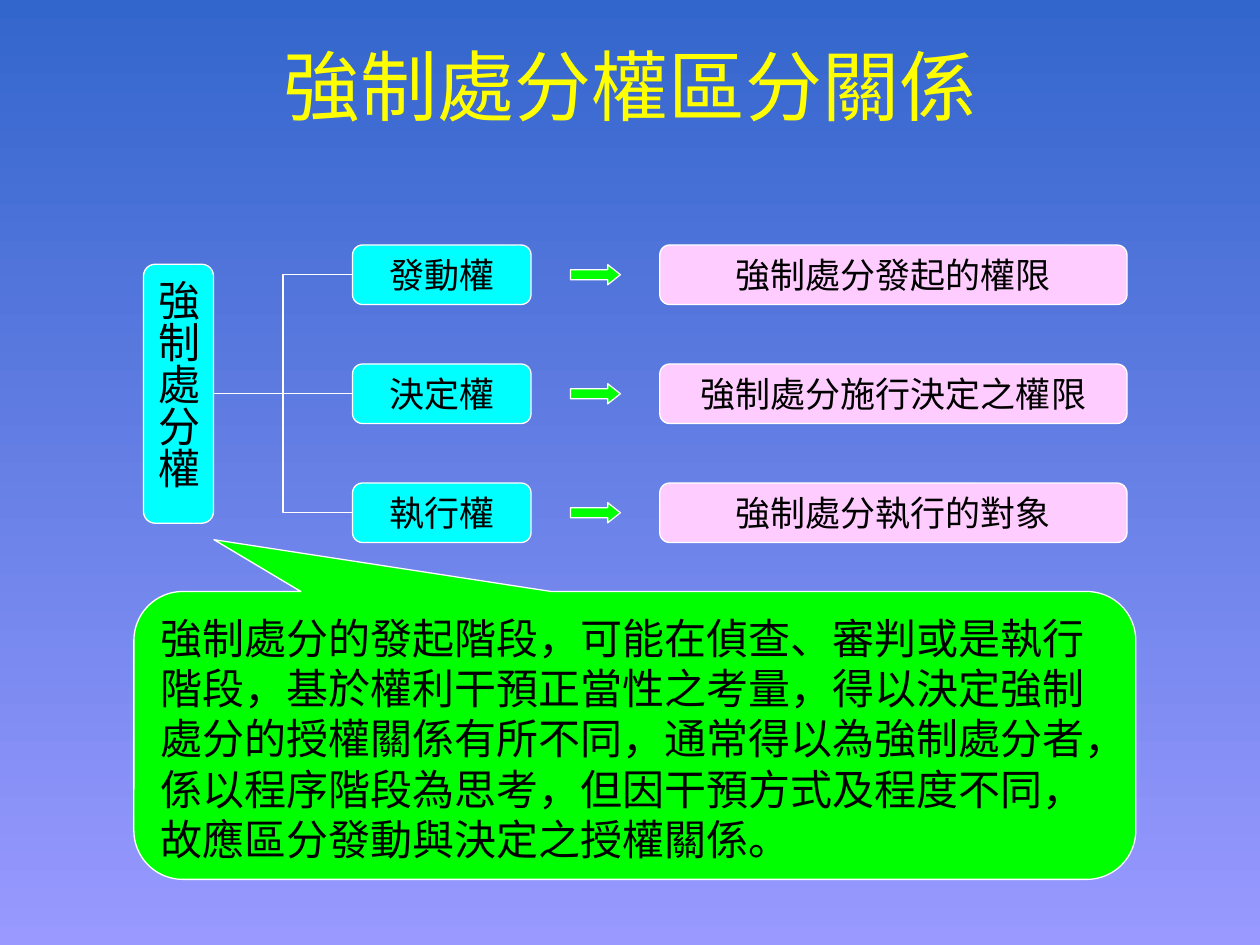
from lxml import etree
from pptx import Presentation
from pptx.dml.color import RGBColor
from pptx.enum.shapes import MSO_CONNECTOR, MSO_SHAPE
from pptx.enum.text import MSO_ANCHOR, PP_ALIGN
from pptx.oxml.ns import qn
from pptx.util import Pt

TITLE = "強制處分權區分關係"
ROOT = "強制處分權"
POWERS = [
    ("發動權", "強制處分發起的權限"),
    ("決定權", "強制處分施行決定之權限"),
    ("執行權", "強制處分執行的對象"),
]
EXPLANATION = (
    "強制處分的發起階段，可能在偵查、審判或是執行階段，"
    "基於權利干預正當性之考量，得以決定強制處分的授權關係有所不同，"
    "通常得以為強制處分者，係以程序階段為思考，"
    "但因干預方式及程度不同，故應區分發動與決定之授權關係。"
)

BLUE = RGBColor(0x33, 0x66, 0xCC)
LAVENDER = RGBColor(0x99, 0x99, 0xFF)
YELLOW = RGBColor(0xFF, 0xFF, 0x00)
CYAN = RGBColor(0x00, 0xFF, 0xFF)
PINK = RGBColor(0xFF, 0xCC, 0xFF)
GREEN = RGBColor(0x00, 0xFF, 0x00)
WHITE = RGBColor(0xFF, 0xFF, 0xFF)
BLACK = RGBColor(0x00, 0x00, 0x00)

MIDDLE = 225  # centre line of the tree
ROW_PITCH = 68
ROW_HEIGHT = 34
ROOT_HEIGHT = 148
ARROW_HEIGHT = 11.5


def add_text(shape, text, size, color=BLACK, font_name="Roboto",
             align=PP_ALIGN.CENTER, anchor=MSO_ANCHOR.MIDDLE, wrap=False):
    frame = shape.text_frame
    frame.word_wrap = wrap
    frame.vertical_anchor = anchor
    paragraph = frame.paragraphs[0]
    paragraph.alignment = align
    run = paragraph.add_run()
    run.text = text
    run.font.name = font_name
    run.font.size = Pt(size)
    run.font.color.rgb = color


def add_outlined_shape(slide, kind, left, top, width, height, fill):
    shape = slide.shapes.add_shape(kind, Pt(left), Pt(top), Pt(width), Pt(height))
    shape.shadow.inherit = False
    shape.fill.solid()
    shape.fill.fore_color.rgb = fill
    shape.line.color.rgb = WHITE
    shape.line.width = Pt(0.75)
    return shape


def add_box(slide, text, left, top, width, height, fill, size=20):
    box = add_outlined_shape(slide, MSO_SHAPE.FLOWCHART_ALTERNATE_PROCESS,
                             left, top, width, height, fill)
    add_text(box, text, size)
    return box


def add_branch(slide, parent, child, kind):
    """Join the right side of parent to the left side of child."""
    connector = slide.shapes.add_connector(kind, 0, 0, 0, 0)
    connector.begin_connect(parent, 3)
    connector.end_connect(child, 1)
    connector.line.color.rgb = WHITE
    connector.line.width = Pt(0.75)
    etree.SubElement(connector.element.spPr, qn("a:effectLst"))


def main():
    presentation = Presentation()
    presentation.slide_width = Pt(720)
    presentation.slide_height = Pt(540)
    slide = presentation.slides.add_slide(presentation.slide_layouts[6])

    background = slide.background.fill
    background.gradient()
    background.gradient_angle = 270
    for stop, color in zip(background.gradient_stops, (BLUE, LAVENDER)):
        stop.color.rgb = color

    title = slide.shapes.add_textbox(Pt(24), Pt(18), Pt(672), Pt(61))
    add_text(title, TITLE, 44, YELLOW, "Arial", wrap=True)

    root = add_box(slide, ROOT, 82, MIDDLE - ROOT_HEIGHT / 2, 40, ROOT_HEIGHT, CYAN, 24)
    root.element.txBody.find(qn("a:bodyPr")).set("vert", "eaVert")

    middle_row = len(POWERS) // 2
    for row, (power, meaning) in enumerate(POWERS):
        center = MIDDLE + (row - middle_row) * ROW_PITCH
        top = center - ROW_HEIGHT / 2
        power_box = add_box(slide, power, 201.5, top, 102, ROW_HEIGHT, CYAN)
        add_box(slide, meaning, 377, top, 267, ROW_HEIGHT, PINK)
        arrow = add_outlined_shape(slide, MSO_SHAPE.RIGHT_ARROW, 326,
                                   center - ARROW_HEIGHT / 2, 28.5, ARROW_HEIGHT, GREEN)
        arrow.adjustments[1] = 0.63
        straight = row == middle_row
        add_branch(slide, root, power_box,
                   MSO_CONNECTOR.STRAIGHT if straight else MSO_CONNECTOR.ELBOW)

    callout = add_outlined_shape(slide, MSO_SHAPE.ROUNDED_RECTANGULAR_CALLOUT,
                                 76.5, 338, 572.5, 164.5, GREEN)
    for index, value in enumerate((-0.42, -0.68, 0.17)):
        callout.adjustments[index] = value
    add_text(callout, EXPLANATION, 24, align=PP_ALIGN.LEFT,
             anchor=MSO_ANCHOR.TOP, wrap=True)

    presentation.save("out.pptx")


if __name__ == "__main__":
    main()
